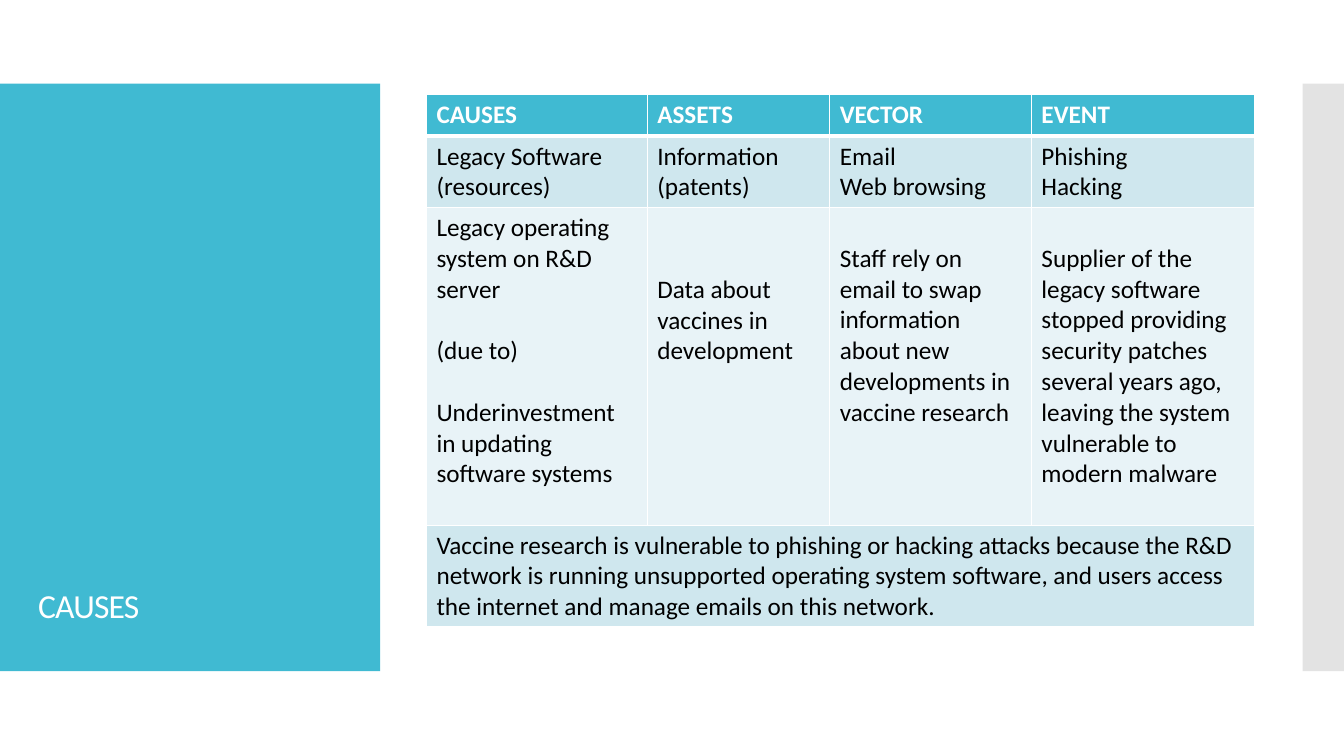
from lxml import etree
from pptx import Presentation
from pptx import util as u
from pptx.dml import color
from pptx.enum import shapes, text
from pptx.oxml import ns

TEAL, GREY, WHITE, BLACK = "40BAD2", "C8C8C8", "FFFFFF", "000000"
PALE, LIGHT = "CFE7EE", "E8F3F7"
LINE = 22  # height of one 18 pt line, in points


def rgb(code):
    return color.RGBColor.from_string(code)


def sub(parent, tag, **attrs):
    return etree.SubElement(parent, ns.qn(tag), attrs)


class Deck:
    font = "Calibri"

    def __init__(self):
        self.prs = Presentation()
        self.prs.slide_width = u.Inches(13.33)
        self.prs.slide_height = u.Inches(7.5)
        self.slide = self.prs.slides.add_slide(self.prs.slide_layouts[6])

    def style(self, par, size, ink, bold=False):
        for run in par.runs:
            run.font.name = self.font
            run.font.size = u.Pt(size)
            run.font.bold = bold
            run.font.color.rgb = rgb(ink)

    def panel(self, box, fill, alpha=None):
        rect = self.slide.shapes.add_shape(
            shapes.MSO_SHAPE.RECTANGLE, *map(u.Inches, box))
        rect.shadow.inherit = False
        rect.fill.solid()
        rect.fill.fore_color.rgb = rgb(fill)
        rect.line.fill.background()
        if alpha:
            tint = rect.fill._xPr.find(".//" + ns.qn("a:srgbClr"))
            sub(tint, "a:alpha", val=str(alpha * 1000))

    def title(self, box, words):
        frame = self.slide.shapes.add_textbox(*map(u.Inches, box)).text_frame
        frame.word_wrap = True
        frame.vertical_anchor = text.MSO_ANCHOR.BOTTOM
        frame.text = words
        par = frame.paragraphs[0]
        par.line_spacing = 0.9
        self.style(par, 24, WHITE)
        par.runs[0].font._element.set("spc", "-60")

    def border(self, cell, top, bottom):
        props = cell._tc.get_or_add_tcPr()
        sides = (("L", 1), ("R", 1), ("T", top), ("B", bottom))
        for spot, (side, width) in enumerate(sides):
            line = sub(props, "a:ln" + side, w=str(u.Pt(width)))
            sub(sub(line, "a:solidFill"), "a:srgbClr", val=WHITE)
            props.insert(spot, line)

    def cell(self, cell, words, fill, row, drop=0, gap=0):
        head = row == 0
        cell.fill.solid()
        cell.fill.fore_color.rgb = rgb(fill)
        self.border(cell, 3 if row == 1 else 1, 3 if head else 1)
        cell.margin_top = u.Inches(0.05) + u.Pt(drop * LINE)
        cell.text_frame.text = words
        for spot, par in enumerate(cell.text_frame.paragraphs):
            par.space_before = u.Pt(gap if spot else 0)
            self.style(par, 18, WHITE if head else BLACK, head)

    def table(self, box, cols, highs, rows, fills, drops, gaps):
        grid = self.slide.shapes.add_table(
            len(rows), len(cols), *map(u.Inches, box)).table
        for col, width in zip(grid.columns, cols):
            col.width = u.Inches(width)
        for row, high in zip(grid.rows, highs):
            row.height = u.Inches(high)
        for r, row in enumerate(rows):
            for c in range(len(cols)):
                words = row[c] if c < len(row) else ""
                self.cell(grid.cell(r, c), words, fills[r], r,
                          drops.get((r, c), 0), gaps.get((r, c), 0))
            if len(row) == 1:
                grid.cell(r, 0).merge(grid.cell(r, len(cols) - 1))


ROWS = [
    ["CAUSES", "ASSETS", "VECTOR", "EVENT"],
    ["Legacy Software (resources)", "Information (patents)",
     "Email\nWeb browsing", "Phishing\nHacking"],
    ["Legacy operating system on R&D server\n(due to)\n"
     "Underinvestment in updating software systems",
     "Data about vaccines in development",
     "Staff rely on email to swap information about new developments in "
     "vaccine research",
     "Supplier of the legacy software stopped providing security patches "
     "several years ago, leaving the system vulnerable to modern malware"],
    ["Vaccine research is vulnerable to phishing or hacking attacks because "
     "the R&D network is running unsupported operating system software, and "
     "users access the internet and manage emails on this network."],
]


def main():
    deck = Deck()
    # Side panels and title
    deck.panel((0, 0.83, 3.77, 5.83), TEAL)
    deck.panel((12.92, 0.83, 0.41, 5.83), GREY, alpha=50)
    deck.title((0.28, 1.23, 3.22, 5.03), "CAUSES")
    # Table of causes; drops are blank lines above a cell's text
    deck.table((4.23, 0.94, 8.21, 5.28), (2.19, 1.81, 2, 2.21),
               (0.41, 0.71, 3.15, 1.01), ROWS, (TEAL, PALE, LIGHT, PALE),
               drops={(2, 1): 2, (2, 2): 1, (2, 3): 1}, gaps={(2, 0): LINE})
    deck.prs.save("out.pptx")


if __name__ == "__main__":
    main()
